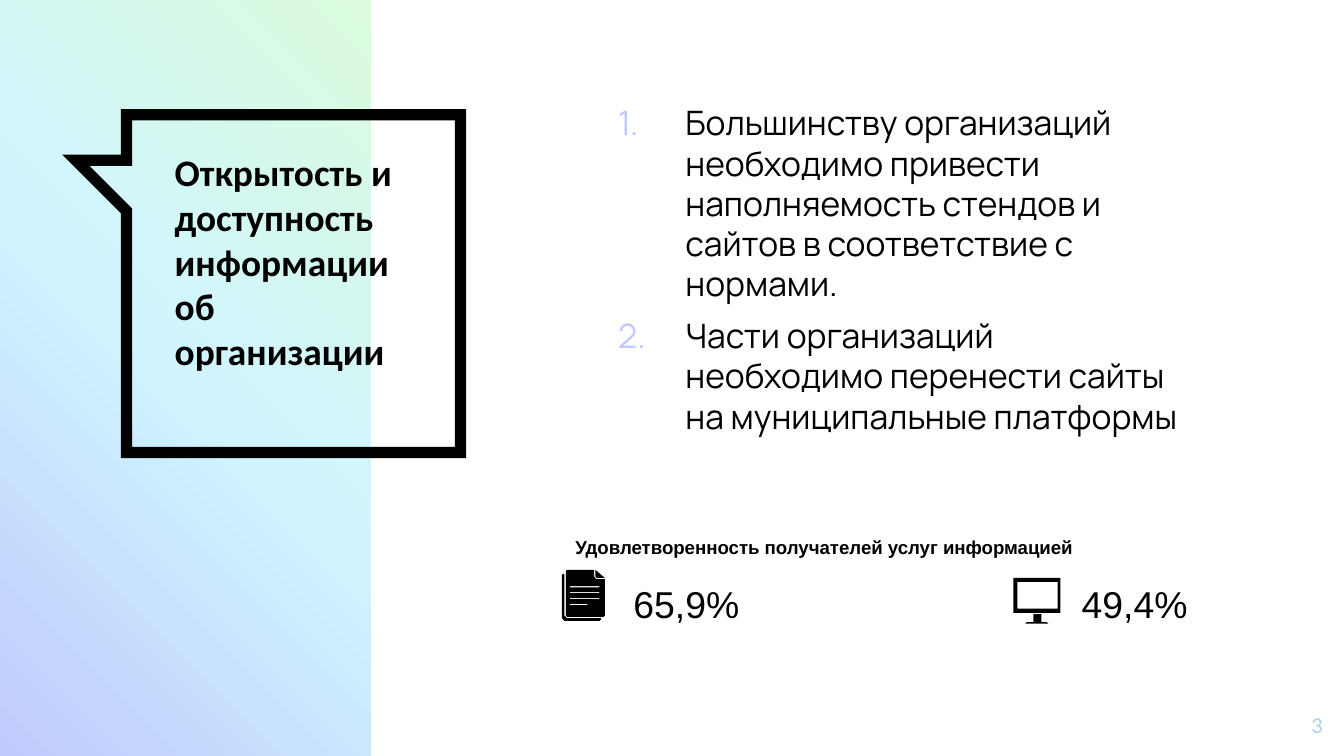
from copy import deepcopy

from lxml import etree
from pptx import Presentation
from pptx.dml.color import RGBColor
from pptx.enum.shapes import MSO_SHAPE
from pptx.enum.text import MSO_ANCHOR, MSO_AUTO_SIZE, PP_ALIGN
from pptx.oxml.ns import qn
from pptx.util import Emu, Inches, Pt

RECTANGLE = MSO_SHAPE.RECTANGLE
TOP, MIDDLE = MSO_ANCHOR.TOP, MSO_ANCHOR.MIDDLE
LEFT, CENTER, RIGHT = PP_ALIGN.LEFT, PP_ALIGN.CENTER, PP_ALIGN.RIGHT
NO_AUTOFIT = MSO_AUTO_SIZE.NONE

BLACK = RGBColor(0x00, 0x00, 0x00)
LAVENDER = RGBColor(0xC0, 0xCA, 0xFC)
AQUA = RGBColor(0xD0, 0xF5, 0xFF)
MINT = RGBColor(0xDA, 0xFB, 0xDD)
PAGE_BLUE = RGBColor(0xAF, 0xCF, 0xEC)

HEADING_FONT, LIST_FONT, STAT_FONT = "Calibri", "Manrope", "Arial"

# The grid has square cells: 100 columns by 56.25 rows
COLUMNS, ROWS = 100, 56.25
CELL = Inches(0.1)


def cells(count):
    return Emu(round(count * CELL))


def box(left, top, right, bottom):
    """Corners of a rectangle, clockwise."""
    return [(left, top), (right, top), (right, bottom), (left, bottom)]


class SlideBuilder:
    def __init__(self, slide):
        self.slide = slide
        self.shapes = slide.shapes

    def place(self, placeholder, left, top, width, height):
        """Set the area and bring the placeholder in front of the artwork."""
        placeholder.left, placeholder.top = cells(left), cells(top)
        placeholder.width, placeholder.height = cells(width), cells(height)
        placeholder._element.getparent().append(placeholder._element)

    def frame(self, shape, anchor=TOP, inset_top=1):
        frame = shape.text_frame
        frame.word_wrap = True
        frame.auto_size = NO_AUTOFIT
        frame.vertical_anchor = anchor
        frame.margin_left = frame.margin_right = frame.margin_bottom = cells(1)
        frame.margin_top = cells(inset_top)
        return frame

    def style(self, paragraph, font, size, color=BLACK, bold=False, align=LEFT):
        paragraph.alignment = align
        for run in paragraph.runs:
            run.font.name, run.font.size = font, Pt(size)
            run.font.bold, run.font.color.rgb = bold, color

    def gradient_panel(self, area, colors, angle):
        panel = self.shapes.add_shape(RECTANGLE, *map(cells, area))
        panel.shadow.inherit = False
        panel.line.fill.background()
        panel.fill.gradient()
        panel.fill.gradient_angle = angle
        stop_list = next(panel._element.iter(qn("a:gsLst")))
        for _ in colors[2:]:
            stop_list.insert(1, deepcopy(stop_list[0]))
        for index, (stop, color) in enumerate(zip(panel.fill.gradient_stops, colors)):
            stop.position = index / (len(colors) - 1)
            stop.color.rgb = color

    def outline(self, *contours, shapes=None, line_width=None):
        """Closed contours; filled black, or only stroked if a width is given."""
        # The builder rounds to whole units, so points are passed in EMU
        contours = [[(cells(x), cells(y)) for x, y in contour] for contour in contours]
        builder = (shapes or self.shapes).build_freeform(*contours[0][0])
        builder.add_line_segments(contours[0][1:], close=True)
        for contour in contours[1:]:
            builder.move_to(*contour[0])
            builder.add_line_segments(contour[1:], close=True)
        shape = builder.convert_to_shape()
        shape.shadow.inherit = False
        if line_width:
            shape.fill.background()
            shape.line.color.rgb, shape.line.width = BLACK, Pt(line_width)
            stroke = shape._element.spPr.find(qn("a:ln"))
            etree.SubElement(stroke, qn("a:miter"), lim="800000")
        else:
            shape.fill.solid()
            shape.fill.fore_color.rgb = BLACK
            shape.line.fill.background()

    def icon(self, *parts):
        group = self.shapes.add_group_shape()
        for contours in parts:
            self.outline(*contours, shapes=group.shapes)

    def title(self, area, text):
        title = self.shapes.title
        self.place(title, *area)
        frame = self.frame(title)
        frame.text = text
        self.style(frame.paragraphs[0], HEADING_FONT, 20, bold=True)

    def numbered_list(self, area, items):
        body = self.slide.placeholders[1]
        self.place(body, *area)
        frame = self.frame(body)
        frame.text = "\n".join(items)
        for paragraph in frame.paragraphs:
            self.style(paragraph, LIST_FONT, 18)
            paragraph.line_spacing, paragraph.space_before = 1.0, Pt(6)
            props = paragraph._p.get_or_add_pPr()
            props.set("marL", str(cells(5)))
            props.set("indent", str(cells(-5)))
            number_color = etree.SubElement(props, qn("a:buClr"))
            etree.SubElement(number_color, qn("a:srgbClr"), val=str(LAVENDER))
            etree.SubElement(props, qn("a:buFont"), typeface=LIST_FONT)
            etree.SubElement(props, qn("a:buAutoNum"), type="arabicPeriod")

    def statistics(self, area, heading, values, stops):
        frame = self.frame(self.shapes.add_textbox(*map(cells, area)), inset_top=4.35)
        frame.text = heading
        self.style(frame.paragraphs[0], STAT_FONT, 10, bold=True, align=CENTER)
        figures = frame.add_paragraph()
        figures.text = "".join("\t" + value for value in values)
        self.style(figures, STAT_FONT, 20)
        figures.space_before = Pt(12.4)
        tabs = etree.SubElement(figures._p.get_or_add_pPr(), qn("a:tabLst"))
        for stop in stops:
            etree.SubElement(tabs, qn("a:tab"), pos=str(cells(stop)), algn="l")

    def page_number(self, area, number):
        frame = self.frame(self.shapes.add_textbox(*map(cells, area)), MIDDLE)
        frame.text = number
        self.style(frame.paragraphs[0], HEADING_FONT, 12, PAGE_BLUE, align=RIGHT)


def main():
    deck = Presentation()
    deck.slide_width, deck.slide_height = cells(COLUMNS), cells(ROWS)
    page = SlideBuilder(deck.slides.add_slide(deck.slide_layouts[1]))

    # Side panel and speech bubble
    page.gradient_panel((0, 0, 27.6, ROWS), [LAVENDER, AQUA, MINT], 45)
    bubble_tail = [(9.42, 15.7), (5.65, 11.93), (9.42, 11.93)]
    page.outline(box(9.42, 8.54, 34.26, 33.68) + bubble_tail, line_width=6)

    # Title and recommendations
    page.title((12, 10.1, 20.1, 22.2),
               "Открытость и доступность информации об организации")
    page.numbered_list((45, 6.6, 43.9, 27.3), [
        "Большинству организаций необходимо привести наполняемость стендов "
        "и сайтов в соответствие с нормами.",
        "Части организаций необходимо перенести сайты на муниципальные платформы",
    ])

    # Satisfaction figures
    page.statistics((27.6, 35.5, 67.4, 17.1),
                    "Удовлетворенность получателей услуг информацией",
                    ["65,9%", "49,4%"], [18.55, 51.9])

    # Document icon: back sheet, front sheet with text lines, folded corner
    back_sheet = [(41.8, 42.8), (41.9, 42.7), (42, 42.7), (42, 45.8), (42.2, 46),
                  (44.7, 46), (44.7, 46.1), (44.6, 46.2), (42, 46.2), (41.8, 46)]
    front_sheet = [(42.1, 42.5), (42.2, 42.4), (44.2, 42.4), (44.2, 42.9),
                   (44.4, 43.1), (45, 43.1), (45, 45.8), (44.9, 45.9),
                   (42.2, 45.9), (42.1, 45.8)]
    text_lines = [box(42.4, 43.62 + 0.44 * row, right, 43.7 + 0.44 * row)
                  for row, right in enumerate([44.6, 44.6, 44.6, 43.7])]
    folded_corner = [(44.3, 42.4), (44.3, 42.9), (44.4, 43), (45, 43)]
    page.icon([back_sheet], [front_sheet, *text_lines], [folded_corner])

    # Monitor icon: stand, framed screen
    stand = [(76.9, 45.7), (76.9, 46.3), (76.4, 46.3), (76.3, 46.4), (78, 46.4),
             (77.9, 46.3), (77.5, 46.3), (77.5, 45.7)]
    page.icon([stand], [box(75.4, 43, 78.9, 45.6), box(75.7, 43.3, 78.7, 45.3)])

    page.page_number((93.4, 51.8, 6, 4.3), "3")
    deck.save("out.pptx")


if __name__ == "__main__":
    main()
